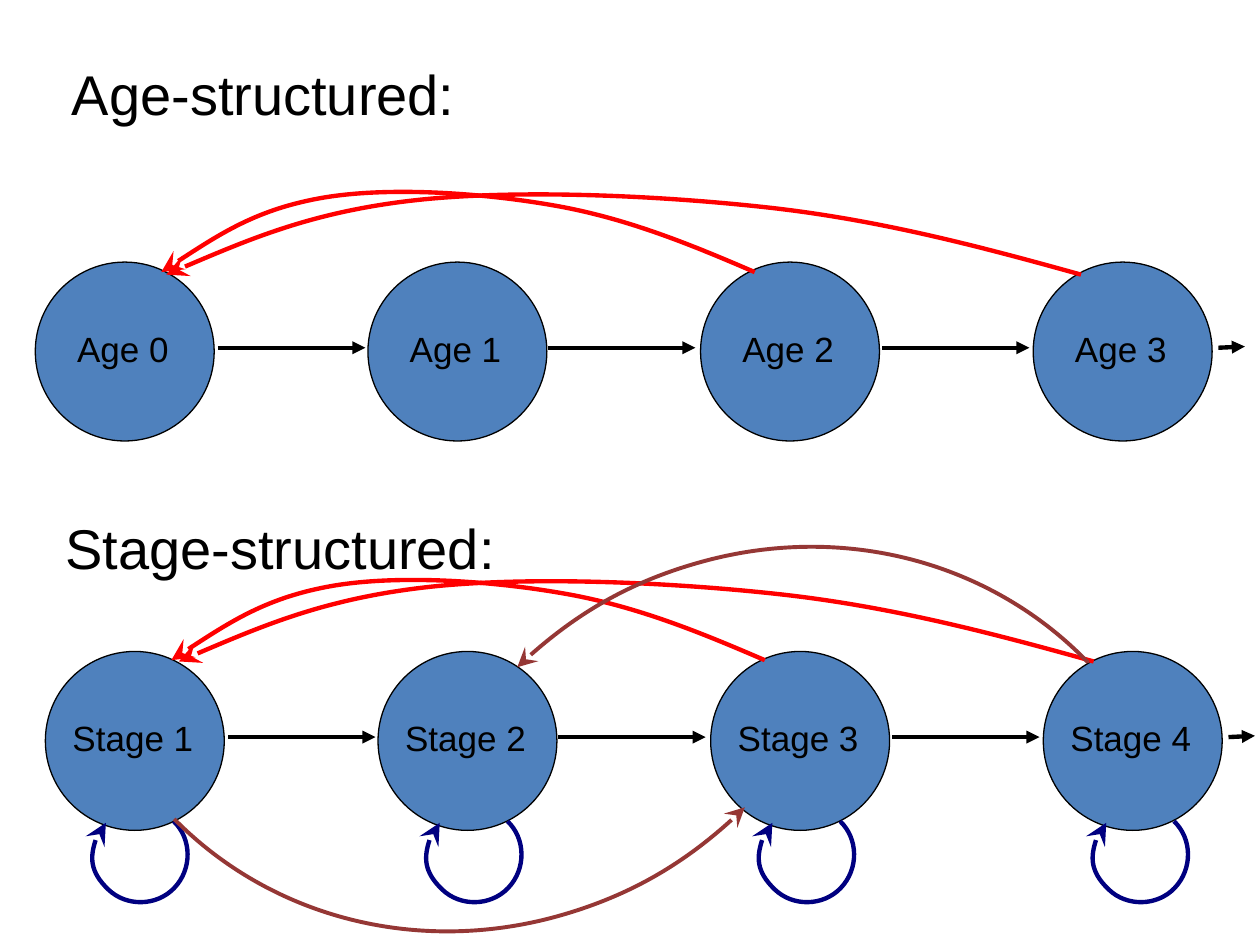
import pptx
import pptx.util
import pptx.dml.color
import pptx.enum.shapes
import pptx.enum.text
import pptx.oxml
import pptx.oxml.ns

Inches = pptx.util.Inches
SHAPES = pptx.enum.shapes.MSO_SHAPE
ALIGN = pptx.enum.text.PP_ALIGN

HEADINGS = [
    ("Age-structured:", (0.47, 0.42, 3.33, 0.64)),
    ("Stage-structured:", (0.42, 4.03, 3.65, 0.64)),
]
ROWS = [
    (["Age 0", "Age 1", "Age 2", "Age 3"], 0.28, 2.08),
    (["Stage 1", "Stage 2", "Stage 3", "Stage 4"], 0.36, 5.17),
]
ARROWS = [(1.45, 1.17, 0), (4.07, 1.17, 0), (6.72, 1.17, 0), (9.39, 0.21, -0.01)]
CIRCLE = 1.42
STEP = 2.64

SHORT_RETURN = [
    (4.71, 0.68), (4.2, 0.46), (3.69, 0.25), (3.11, 0.15), (2.54, 0.05),
    (1.8, 0), (1.28, 0.09), (0.76, 0.18), (0.38, 0.43), (0, 0.68),
]
LONG_RETURN = [
    (7.26, 0.68), (6.47, 0.46), (5.68, 0.25), (4.8, 0.15), (3.91, 0.05),
    (2.77, 0), (1.97, 0.09), (1.17, 0.18), (0.58, 0.43), (0, 0.68),
]
SELF_LOOP = [
    (0.37, 0.75), (0.17, 0.75), (0, 0.58), (0, 0.37), (0, 0.17),
    (0.17, 0), (0.37, 0), (0.58, 0), (0.75, 0.17), (0.75, 0.37),
]
LOOP_LEFTS = [0.74, 3.39, 6.03, 8.68]
CURVES = [(SELF_LOOP, left, 6.41, 223.7, "000080") for left in LOOP_LEFTS] + [
    (SHORT_RETURN, 1.36, 4.56, 0, "FF0000"),
    (SHORT_RETURN, 1.28, 1.48, 0, "FF0000"),
    (LONG_RETURN, 1.32, 1.5, 0, "FF0000"),
    (LONG_RETURN, 1.42, 4.57, 0, "FF0000"),
]
JUMPS = [((0.61, 0.9, 6.23, 6.58), 45.4), ((3.15, 4.25, 6.23, 6.58), 226.1)]


def color(value):
    return pptx.dml.color.RGBColor.from_string(value)


def element(tag, **attributes):
    node = pptx.oxml.parse_xml(f'<a:{tag} {pptx.oxml.ns.nsdecls("a")}/>')
    for key, value in attributes.items():
        node.set(key, value)
    return node


def write(box, text, size, align):
    frame = box.text_frame
    frame.text = text
    para = frame.paragraphs[0]
    para.alignment = align
    span = para.runs[0]
    formats = {"name": "Arial", "size": pptx.util.Pt(size), "bold": False}
    for key, value in formats.items():
        setattr(span.font, key, value)
    span.font.color.rgb = color("000000")


def set_frame(box, wrap):
    formats = {
        "word_wrap": wrap,
        "auto_size": pptx.enum.text.MSO_AUTO_SIZE.NONE,
        "vertical_anchor": pptx.enum.text.MSO_ANCHOR.TOP,
    }
    for key, value in formats.items():
        setattr(box.text_frame, key, value)


def set_line(shape, value, width, head=None, size="med"):
    shape.line.color.rgb = color(value)
    shape.line.width = pptx.util.Pt(width)
    if head:
        tail = element("tailEnd", type=head, w=size, len=size)
        shape.line._get_or_add_ln().append(tail)


def place(box, bounds):
    for key, value in zip(("left", "top", "width", "height"), bounds):
        setattr(box, key, Inches(value))


def add_circle(page, name, left, top):
    size = Inches(CIRCLE)
    circle = page.shapes.add_shape(SHAPES.OVAL, Inches(left), Inches(top), size, size)
    circle.shadow.inherit = False
    circle.fill.solid()
    circle.fill.fore_color.rgb = color("4F81BD")
    set_line(circle, "000000", 0.75)
    bounds = (left - 0.03, top + 0.47, 1.45, 0.43)
    label = page.shapes.add_textbox(*map(Inches, bounds))
    set_frame(label, True)
    write(label, name, 20, ALIGN.CENTER)


def add_arrow(page, left, top, length, rise):
    ends = (left, top, left + length, top + rise)
    kind = pptx.enum.shapes.MSO_CONNECTOR.STRAIGHT
    arrow = page.shapes.add_connector(kind, *map(Inches, ends))
    set_line(arrow, "000000", 2.5, "triangle")
    arrow._element.spPr.append(element("effectLst"))


def add_curve(page, controls, left, top, rotation, value):
    points = [(Inches(left + x), Inches(top + y)) for x, y in controls]
    builder = page.shapes.build_freeform(*points[0])
    builder.add_line_segments(points[1:], close=False)
    curve = builder.convert_to_shape()
    segments = curve._element.spPr.findall(".//" + pptx.oxml.ns.qn("a:lnTo"))
    outline = segments[0].getparent()
    for start in range(0, len(segments), 3):
        bezier = element("cubicBezTo")
        for segment in segments[start:start + 3]:
            bezier.append(segment[0])
            outline.remove(segment)
        outline.append(bezier)
    curve.rotation = rotation
    finish_curve(curve, value, 2.5)


def add_jump(page, bounds, rotation):
    jump = page.shapes.add_shape(SHAPES.ARC, *map(Inches, bounds))
    jump.rotation = rotation
    jump._element.spPr.xfrm.set("flipV", "1")
    finish_curve(jump, "953735", 2.25)


def finish_curve(shape, value, width):
    shape.shadow.inherit = False
    shape.fill.background()
    set_line(shape, value, width, "stealth", "lg")


def main():
    deck = pptx.Presentation()
    deck.slide_width = Inches(10)
    deck.slide_height = Inches(7.5)
    page = deck.slides.add_slide(deck.slide_layouts[5])

    second = page.shapes.add_textbox(0, 0, 0, 0)
    for box, (text, bounds) in zip((page.shapes.title, second), HEADINGS):
        place(box, bounds)
        set_frame(box, False)
        write(box, text, 32, ALIGN.LEFT)

    for names, left, top in ROWS:
        for index, name in enumerate(names):
            add_circle(page, name, left + index * STEP, top)
        for offset, length, rise in ARROWS:
            add_arrow(page, left + offset, top + 0.68, length, rise)

    for curve in CURVES:
        add_curve(page, *curve)
    for jump in JUMPS:
        add_jump(page, *jump)
    deck.save("out.pptx")


if __name__ == "__main__":
    main()
